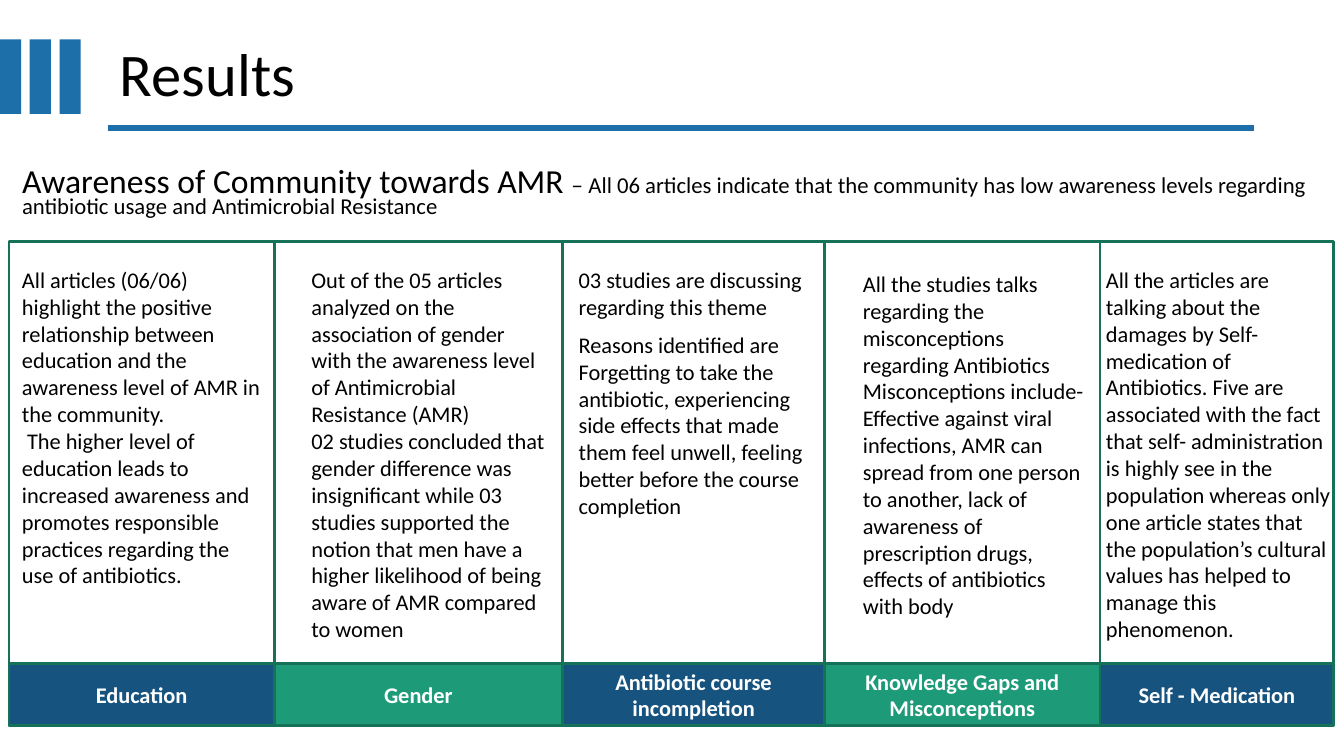
from pptx import Presentation
from pptx.dml.color import RGBColor
from pptx.enum.shapes import MSO_CONNECTOR as CONN, MSO_SHAPE as SHAPE
from pptx.enum.text import MSO_ANCHOR as ANCHOR, PP_ALIGN as ALIGN
from pptx.oxml.ns import qn
from pptx.util import Inches, Pt

COLORS = {"black": "000000", "white": "FFFFFF", "accent": "1D6FA9",
          "border": "157259", "navy": "16537F", "green": "1D9A78"}
FONT = "Calibri"
TITLE = "Results"
SUMMARY = [
    ("Awareness of Community towards AMR ", 24),
    ("– ", 16.8),
    ("All 06 articles indicate that the community has low awareness levels "
     "regarding antibiotic usage and Antimicrobial Resistance", 16.2),
]
THEMES = [
    {"name": "Education", "width": 2.63, "text_box": (0.12, 2.59, 2.57, 3.57), "after": 0,
     "body": ["All articles (06/06) highlight the positive relationship between education "
              "and the awareness level of AMR in the community.",
              " The higher level of education leads to increased awareness and promotes "
              "responsible practices regarding the use of antibiotics."]},
    {"name": "Gender", "width": 2.86, "text_box": (2.99, 2.59, 2.54, 3.74), "after": 0,
     "body": ["Out of the 05 articles analyzed on the association of gender with the "
              "awareness level of Antimicrobial Resistance (AMR)",
              "02 studies concluded that gender difference was insignificant while 03 "
              "studies supported the notion that men have a higher likelihood of being "
              "aware of AMR compared to women"]},
    {"name": "Antibiotic course incompletion", "width": 2.6,
     "text_box": (5.64, 2.59, 2.49, 3.15), "after": 8,
     "body": ["03 studies are discussing regarding this theme",
              "Reasons identified are Forgetting to take the antibiotic, experiencing side "
              "effects that made them feel unwell, feeling better before the course "
              "completion"]},
    {"name": "Knowledge Gaps and Misconceptions", "width": 2.73,
     "text_box": (8.46, 2.63, 2.45, 4.11), "after": 8,
     "body": ["All the studies talks regarding the misconceptions regarding Antibiotics "
              "Misconceptions include- Effective against viral infections, AMR can spread "
              "from one person to another, lack of awareness of prescription drugs, effects "
              "of antibiotics with body"]},
    {"name": "Self - Medication", "width": 2.32, "text_box": (10.87, 2.59, 2.46, 4.38),
     "after": 8,
     "body": ["All the articles are talking about the damages by Self-medication of "
              "Antibiotics. Five are associated with the fact that self- administration is "
              "highly see in the population whereas only one article states that the "
              "population’s cultural values has helped to manage this phenomenon."]},
]
GRID_LEFT, GRID_TOP, GRID_HEIGHT = 0.09, 2.4, 4.8
LABEL_HEIGHT = 0.62


def color(name):
    return RGBColor.from_string(COLORS[name])


def write(sp, paragraphs, ink="black", bold=False, align=ALIGN.LEFT,
          anchor=ANCHOR.TOP, spacing=1.0, after=0):
    tf = sp.text_frame
    tf.word_wrap = True
    tf.vertical_anchor = anchor
    for i, runs in enumerate(paragraphs):
        p = tf.add_paragraph() if i else tf.paragraphs[0]
        p.alignment = align
        p.line_spacing = spacing
        p.space_before, p.space_after = Pt(0), Pt(after)
        for text, size in runs:
            r = p.add_run()
            r.text = text
            r.font.name, r.font.size, r.font.bold = FONT, Pt(size), bold
            r.font.color.rgb = color(ink)


def add_rect(slide, box, fill=None, line=None):
    sp = slide.shapes.add_shape(SHAPE.RECTANGLE, *map(Inches, box))
    sp.shadow.inherit = False
    if fill:
        sp.fill.solid()
        sp.fill.fore_color.rgb = color(fill)
    else:
        sp.fill.background()
    if line:
        sp.line.color.rgb = color(line)
        sp.line.width = Pt(2)
    else:
        sp.line.fill.background()
    return sp


def add_text(slide, box, paragraphs, **fmt):
    write(slide.shapes.add_textbox(*map(Inches, box)), paragraphs, **fmt)


def add_header(slide):
    title = slide.shapes.title
    title.left, title.top, title.width, title.height = map(Inches, (1.09, 0.35, 2.8, 0.82))
    write(title, [[(TITLE, 43.2)]], anchor=ANCHOR.MIDDLE, spacing=0.9)
    rule = slide.shapes.add_connector(
        CONN.STRAIGHT, Inches(12.44), Inches(1.27), Inches(1.07), Inches(1.27))
    rule.line.color.rgb = color("accent")
    rule.line.width = Pt(4.5)
    sp_pr = rule._element.spPr
    sp_pr.append(sp_pr.makeelement(qn("a:effectLst"), {}))
    for i in range(3):
        add_rect(slide, (i * 0.295, 0.39, 0.21, 0.74), fill="accent")


def add_themes(slide):
    left = GRID_LEFT
    label_top = GRID_TOP + GRID_HEIGHT - LABEL_HEIGHT
    for i, theme in enumerate(THEMES):
        width = theme["width"]
        add_rect(slide, (left, GRID_TOP, width, GRID_HEIGHT), line="border")
        label = add_rect(slide, (left, label_top, width, LABEL_HEIGHT),
                         fill=("navy", "green")[i % 2], line="border")
        write(label, [[(theme["name"], 16)]], ink="white", bold=True,
              align=ALIGN.CENTER, anchor=ANCHOR.MIDDLE)
        add_text(slide, theme["text_box"], [[(text, 16)] for text in theme["body"]],
                 after=theme["after"])
        left += width


def main():
    prs = Presentation()
    prs.slide_width, prs.slide_height = Inches(13.33), Inches(7.5)
    slide = prs.slides.add_slide(prs.slide_layouts[5])
    add_header(slide)
    add_themes(slide)
    add_text(slide, (0.12, 1.62, 13.11, 0.62), [SUMMARY], anchor=ANCHOR.MIDDLE, spacing=0.7)
    prs.save("out.pptx")


if __name__ == "__main__":
    main()
